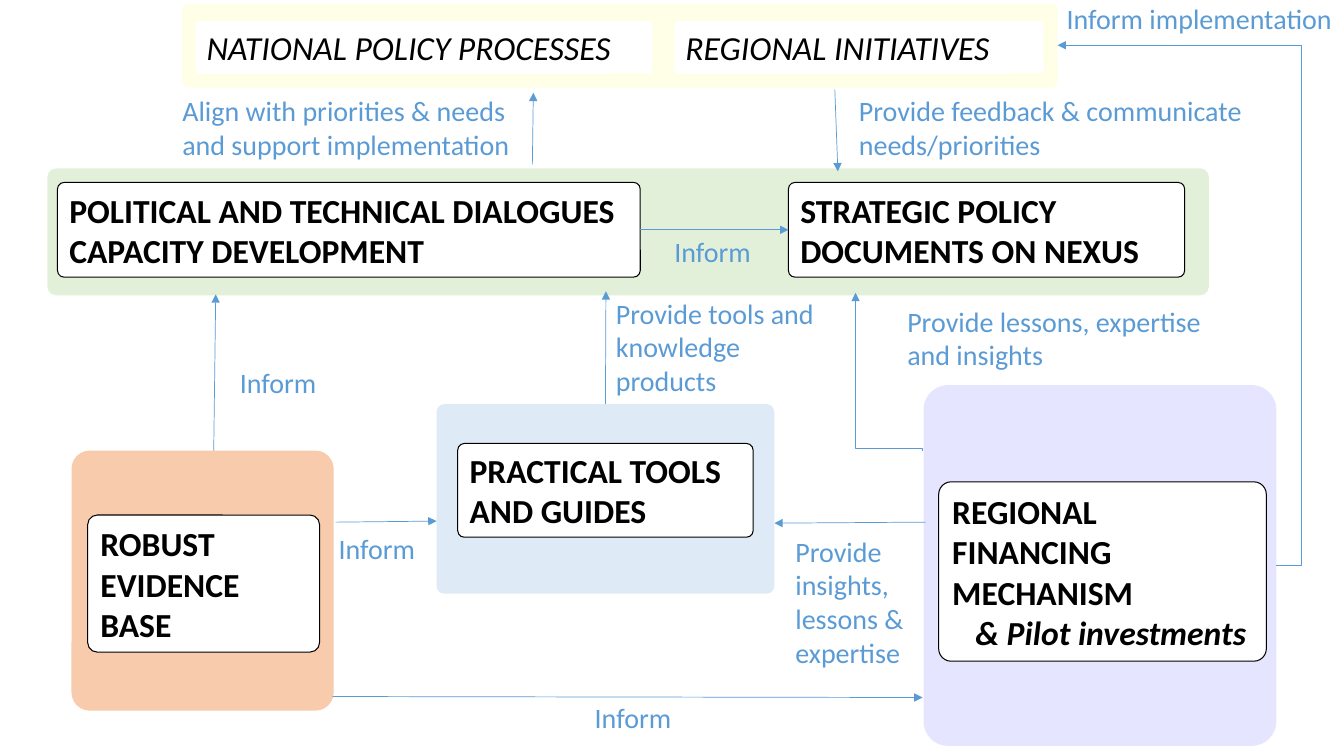
from lxml import etree
from pptx import Presentation
from pptx.dml.color import RGBColor
from pptx.enum.shapes import MSO_CONNECTOR, MSO_SHAPE
from pptx.enum.text import MSO_ANCHOR, MSO_AUTO_SIZE, PP_ALIGN
from pptx.oxml.ns import qn
from pptx.util import Pt

PX = 9144
ROUNDED = MSO_SHAPE.ROUNDED_RECTANGLE
STRAIGHT = MSO_CONNECTOR.STRAIGHT
ELBOW = MSO_CONNECTOR.ELBOW
MIDDLE = MSO_ANCHOR.MIDDLE
LEFT = PP_ALIGN.LEFT
GROW = MSO_AUTO_SIZE.SHAPE_TO_FIT_TEXT
TOP_SIDE, LEFT_SIDE, RIGHT_SIDE = 0, 1, 3
FONT = "Calibri"
BLUE = "5B9BD5"
BLACK = "000000"
WHITE = "FFFFFF"


def px(*values):
    return [v * PX for v in values]


def rgb(color):
    return RGBColor.from_string(color)


def set_text(sp, text, size, color, bold=False, italic=False):
    tf = sp.text_frame
    tf.word_wrap = True
    tf.auto_size = GROW
    tf.text = text
    for p in tf.paragraphs:
        p.alignment = LEFT
        for r in p.runs:
            r.font.name = FONT
            r.font.size = Pt(size)
            r.font.bold = bold
            r.font.italic = italic
            r.font.color.rgb = rgb(color)
    return tf


def add_panel(slide, box, fill, radius=0.07, alpha=None):
    sp = slide.shapes.add_shape(ROUNDED, *px(*box))
    sp.shadow.inherit = False
    sp.adjustments[0] = radius
    sp.fill.solid()
    sp.fill.fore_color.rgb = rgb(fill)
    sp.line.fill.background()
    if alpha:
        clr = sp._element.spPr.find(qn("a:solidFill"))[0]
        etree.SubElement(clr, qn("a:alpha")).set("val", str(alpha * 1000))
    return sp


def add_label(slide, box, text, bold=True, space_before=0):
    sp = add_panel(slide, box, WHITE)
    if bold:
        sp.line.color.rgb = rgb(BLACK)
        sp.line.width = Pt(0.75)
    tf = set_text(sp, text, 24, BLACK, bold, not bold)
    tf.vertical_anchor = MIDDLE
    tf.paragraphs[0].space_before = Pt(space_before)
    return sp


def add_caption(slide, box, text):
    set_text(slide.shapes.add_textbox(*px(*box)), text, 20, BLUE)


def add_arrow(slide, ends, kind=STRAIGHT, bend=None, turn=0):
    cxn = slide.shapes.add_connector(kind, *px(*ends))
    cxn.line.color.rgb = rgb(BLUE)
    cxn.line.width = Pt(0.5)
    spPr = cxn._element.spPr
    etree.SubElement(spPr.find(qn("a:ln")), qn("a:tailEnd")).set("type", "triangle")
    etree.SubElement(spPr, qn("a:effectLst"))
    if bend is not None:
        guides = spPr.find(qn("a:prstGeom")).find(qn("a:avLst"))
        gd = etree.SubElement(guides, qn("a:gd"))
        gd.set("name", "adj1")
        gd.set("fmla", f"val {bend}")
    if turn:
        spPr.find(qn("a:xfrm")).set("rot", str(turn * 60000))
    return cxn


def main():
    prs = Presentation()
    prs.slide_width, prs.slide_height = px(1333, 750)
    slide = prs.slides.add_slide(prs.slide_layouts[6])

    add_panel(slide, (71, 447, 260, 258), "F8CBAD")
    add_panel(slide, (47, 167, 1152, 126), "E2F0D9")
    add_panel(slide, (916, 382, 350, 358), "CCCCFF", alpha=50)
    add_panel(slide, (181, 4, 868, 83), "FFFFE7")
    tools = add_panel(slide, (433, 401, 335, 188), "DEEBF7", radius=0.04)

    add_label(slide, (454, 440, 293, 93), "PRACTICAL TOOLS AND GUIDES", space_before=4.5)
    add_label(slide, (87, 511, 230, 136), "ROBUST EVIDENCE BASE")
    financing = add_label(slide, (931, 478, 325, 178),
                          "REGIONAL FINANCING MECHANISM\n& Pilot investments")
    pilot = financing.text_frame.paragraphs[1]
    pilot.runs[0].font.italic = True
    pilot._p.get_or_add_pPr().set("marL", str(23 * PX))
    strategy = add_label(slide, (782, 181, 393, 94), "STRATEGIC POLICY DOCUMENTS ON NEXUS")
    dialogues = add_label(slide, (57, 181, 578, 94),
                          "POLITICAL AND TECHNICAL DIALOGUES CAPACITY DEVELOPMENT")
    add_label(slide, (194, 21, 453, 52), "NATIONAL POLICY PROCESSES", False, 4.5)
    add_label(slide, (669, 21, 366, 52), "REGIONAL INITIATIVES", False, 4.5)

    for ends in [
        (333, 518, 433, 517),
        (918, 518, 768, 519),
        (528, 163, 529, 92),
        (330, 691, 915, 692),
        (828, 89, 831, 170),
        (212, 447, 214, 292),
    ]:
        add_arrow(slide, ends)
    dialogue_arrow = add_arrow(slide, (635, 228, 782, 228))
    dialogue_arrow.begin_connect(dialogues, RIGHT_SIDE)
    dialogue_arrow.end_connect(strategy, LEFT_SIDE)
    add_arrow(slide, (600, 401, 601, 289)).begin_connect(tools, TOP_SIDE)
    add_arrow(slide, (1266, 561, 1049, 45), ELBOW, bend=-11500)
    add_arrow(slide, (803, 402, 960, 336), ELBOW, bend=1700, turn=270)

    for box, text in [
        ((659, 228, 116, 44), "Inform"),
        ((326, 522, 129, 44), "Inform"),
        ((580, 690, 160, 44), "Inform"),
        ((228, 358, 147, 44), "Inform"),
        ((779, 525, 147, 145), "Provide insights, lessons & expertise"),
        ((601, 289, 217, 111), "Provide tools and knowledge products"),
        ((171, 88, 346, 77), "Align with priorities & needs\nand support implementation"),
        ((1048, -3, 285, 44), "Inform implementation"),
        ((890, 297, 319, 77), "Provide lessons, expertise and insights"),
        ((842, 88, 400, 77), "Provide feedback & communicate needs/priorities"),
    ]:
        add_caption(slide, box, text)

    prs.save("out.pptx")


if __name__ == "__main__":
    main()
